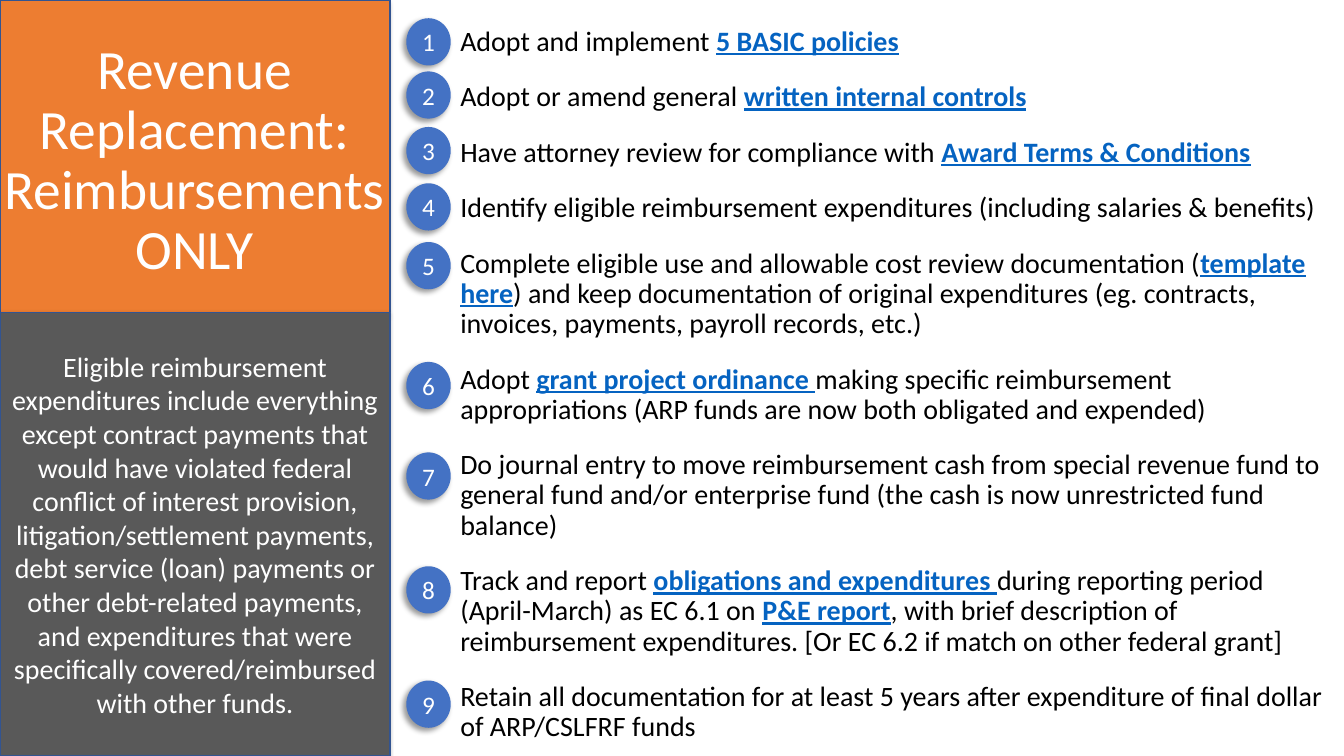
from lxml.etree import SubElement
from pptx import Presentation
from pptx.dml.color import RGBColor
from pptx.enum.shapes import MSO_SHAPE as Kind
from pptx.enum.text import MSO_ANCHOR as Anchor, PP_ALIGN as Align
from pptx.oxml.ns import qn
from pptx.util import Cm, Pt

# Content: asterisks enclose the linked phrases
TITLE = "Revenue Replacement: Reimbursements ONLY"
NOTE = (
    "Eligible reimbursement expenditures include everything except contract "
    "payments that would have violated federal conflict of interest provision, "
    "litigation/settlement payments, debt service (loan) payments or other "
    "debt-related payments, and expenditures that were specifically "
    "covered/reimbursed with other funds."
)
# Top of the number badge in cm, text of the step
STEPS = [
    (0.46, "Adopt and implement *5 BASIC policies*"),
    (1.8, "Adopt or amend general *written internal controls*"),
    (3.2, "Have attorney review for compliance with *Award Terms & Conditions*"),
    (4.62, "Identify eligible reimbursement expenditures (including salaries & benefits)"),
    (6.1, "Complete eligible use and allowable cost review documentation "
          "(*template here*) and keep documentation of original expenditures "
          "(eg. contracts, invoices, payments, payroll records, etc.)"),
    (9.12, "Adopt *grant project ordinance *making specific reimbursement "
           "appropriations (ARP funds are now both obligated and expended)"),
    (11.4, "Do journal entry to move reimbursement cash from special revenue fund "
           "to general fund and/or enterprise fund (the cash is now unrestricted "
           "fund balance)"),
    (14.27, "Track and report *obligations and expenditures *during reporting "
            "period (April-March) as EC 6.1 on *P&E report*, with brief description "
            "of reimbursement expenditures. [Or EC 6.2 if match on other federal grant]"),
    (17.15, "Retain all documentation for at least 5 years after expenditure of "
            "final dollar of ARP/CSLFRF funds"),
]

FONT = "Calibri"
WHITE = RGBColor(0xFF, 0xFF, 0xFF)
BLACK = RGBColor(0, 0, 0)
ORANGE = RGBColor(0xED, 0x7D, 0x31)
GREY = RGBColor(0x59, 0x59, 0x59)
BLUE = RGBColor(0x44, 0x72, 0xC4)
NAVY = RGBColor(0x32, 0x54, 0x91)
LINK = RGBColor(0x05, 0x63, 0xC1)

# Layout in cm
WIDE, HIGH = 33.87, 19.05
SIDE, SPLIT = 9.83, 7.87
BADGE = (10.24, 1.12, 1.19)
BODY = (11.35, 0.56, 22.53, 17.86)

deck = Presentation()
deck.slide_width, deck.slide_height = Cm(WIDE), Cm(HIGH)
slide = deck.slides.add_slide(deck.slide_layouts[6])
shapes = slide.shapes


def style(para, size, color, align=Align.LEFT):
    para.alignment = align
    font = para.font
    font.name, font.size, font.color.rgb = FONT, Pt(size), color


def shade(shape):
    shape.shadow.inherit = False
    group = shape._element.spPr.find(qn("a:effectLst"))
    drop = SubElement(group, qn("a:outerShdw"), blurRad=str(Pt(4)),
                      dist=str(Pt(3)), dir="8100000", algn="tr", rotWithShape="0")
    tint = SubElement(drop, qn("a:srgbClr"), val="000000")
    SubElement(tint, qn("a:alpha"), val="40000")


def block(kind, box, fill, edge=None):
    shape = shapes.add_shape(kind, *map(Cm, box))
    shape.fill.solid()
    shape.fill.fore_color.rgb = fill
    if edge is None:
        shape.line.fill.background()
    else:
        shape.line.color.rgb, shape.line.width = edge, Pt(1)
    shade(shape)
    return shape


def label(shape, text, size):
    frame = shape.text_frame
    frame.word_wrap = True
    frame.vertical_anchor = Anchor.MIDDLE
    para = frame.paragraphs[0]
    para.text = text
    style(para, size, WHITE, Align.CENTER)
    return frame


# Left panels and title
block(Kind.RECTANGLE, (0, 0, SIDE, SPLIT), ORANGE, NAVY)
title = shapes.add_textbox(Cm(-1.52), Cm(2.72), Cm(12.85), Cm(2.69))
label(title, TITLE, 39.6).paragraphs[0].line_spacing = 0.9
panel = block(Kind.RECTANGLE, (0, SPLIT, SIDE, HIGH - SPLIT), GREY, NAVY)
label(panel, NOTE, 20)

# Steps
frame = shapes.add_textbox(*map(Cm, BODY)).text_frame
frame.word_wrap = True
for i, (top, text) in enumerate(STEPS):
    para = frame.add_paragraph() if i else frame.paragraphs[0]
    style(para, 20, BLACK)
    para.line_spacing = 0.9
    para.space_before = Pt(18 if i else 0)
    for j, part in enumerate(text.split("*")):
        if not part:
            continue
        run = para.add_run()
        run.text = part
        if j % 2:
            run.font.bold = run.font.underline = True
            run.font.color.rgb = LINK

# Number badges
left, width, height = BADGE
for num, (top, text) in enumerate(STEPS, 1):
    badge = block(Kind.OVAL, (left, top, width, height), BLUE)
    inner = label(badge, str(num), 18)
    inner.margin_left = inner.margin_right = 0
    inner.margin_top = inner.margin_bottom = 0

deck.save("out.pptx")
